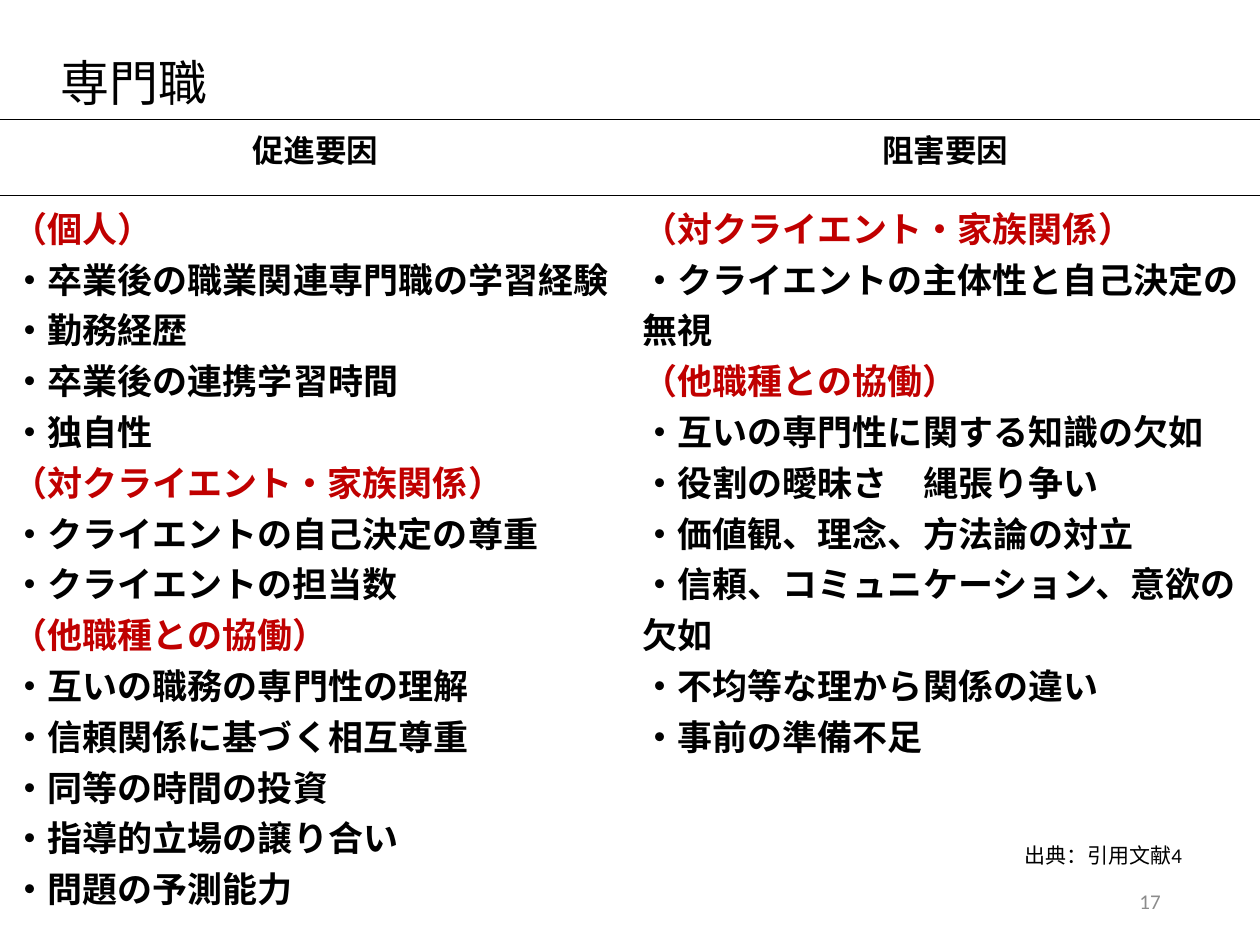
"""Build the slide on factors that help or hinder professionals."""
from lxml import etree
from pptx import Presentation, util as u
from pptx.dml.color import RGBColor
from pptx.enum import shapes, text
from pptx.oxml import ns

BLACK = RGBColor(0, 0, 0)
RED = RGBColor(0xC0, 0, 0)
GREY = RGBColor(0x8C, 0x8C, 0x8C)
WHITE = RGBColor(255, 255, 255)
PLAIN = "{2D5ABB26-0587-4C30-8999-92F81FD0307C}"

HEADS = ["促進要因", "阻害要因"]
LISTS = [
    ["（個人）", "・卒業後の職業関連専門職の学習経験", "・勤務経歴",
     "・卒業後の連携学習時間", "・独自性", "（対クライエント・家族関係）",
     "・クライエントの自己決定の尊重", "・クライエントの担当数",
     "（他職種との協働）", "・互いの職務の専門性の理解",
     "・信頼関係に基づく相互尊重", "・同等の時間の投資",
     "・指導的立場の譲り合い", "・問題の予測能力"],
    ["（対クライエント・家族関係）", "・クライエントの主体性と自己決定の無視",
     "（他職種との協働）", "・互いの専門性に関する知識の欠如",
     "・役割の曖昧さ　縄張り争い", "・価値観、理念、方法論の対立",
     "・信頼、コミュニケーション、意欲の欠如", "・不均等な理から関係の違い",
     "・事前の準備不足"],
]


def write(para, words, size, color=BLACK, bold=False, align=text.PP_ALIGN.LEFT):
    para.alignment = align
    run = para.add_run()
    run.text = words
    run.font.color.rgb = color
    for key, val in {"name": "Calibri", "size": u.Pt(size), "bold": bold}.items():
        setattr(run.font, key, val)


def rule(cell, side):
    line = etree.Element(ns.qn(f"a:{side}"), w=str(u.Pt(1)))
    fill = etree.SubElement(line, ns.qn("a:solidFill"))
    etree.SubElement(fill, ns.qn("a:srgbClr"), val=str(BLACK))
    props = cell._tc.get_or_add_tcPr()
    props.insert(len(props.findall(ns.qn("a:lnT"))), line)


prs = Presentation()
prs.slide_width, prs.slide_height = u.Inches(10), u.Inches(7.5)
wide = prs.slide_width
slide = prs.slides.add_slide(prs.slide_layouts[5])

title = slide.shapes.title
spot = {"left": 0.38, "top": 0.42, "width": 9.34, "height": 0.53}
for key, val in spot.items():
    setattr(title, key, u.Inches(val))
frame = title.text_frame
frame.vertical_anchor = text.MSO_ANCHOR.TOP
frame.auto_size = text.MSO_AUTO_SIZE.NONE
frame.paragraphs[0].line_spacing = 0.9
write(frame.paragraphs[0], "専門職", 28)

grid = slide.shapes.add_table(2, 2, 0, u.Inches(0.95), wide, u.Inches(6.25))
table = grid.table
next(grid.element.iter(ns.qn("a:tableStyleId"))).text = PLAIN
table.horz_banding = False
for row, high in zip(table.rows, (0.6, 5.65)):
    row.height = u.Inches(high)
for col, (head, items) in enumerate(zip(HEADS, LISTS)):
    table.columns[col].width = wide // 2
    top, body = table.cell(0, col), table.cell(1, col)
    for cell in (top, body):
        cell.fill.background()
    write(top.text_frame.paragraphs[0], head, 18, bold=True,
          align=text.PP_ALIGN.CENTER)
    for side in ("lnT", "lnB"):
        rule(top, side)
    rule(body, "lnT")
    for num, item in enumerate(items):
        frame = body.text_frame
        para = frame.add_paragraph() if num else frame.paragraphs[0]
        write(para, item, 20, RED if item.startswith("（") else BLACK, True)

source = slide.shapes.add_shape(
    shapes.MSO_SHAPE.RECTANGLE, *map(u.Inches, (6.98, 6.66, 2.5, 0.25)))
source.shadow.inherit = False
source.fill.solid()
source.fill.fore_color.rgb = WHITE
source.line.fill.background()
page = slide.shapes.add_textbox(*map(u.Inches, (7.06, 6.95, 2.25, 0.4)))
for shape, words, color in ((source, "出典：引用文献4", BLACK), (page, "17", GREY)):
    frame = shape.text_frame
    frame.word_wrap = True
    frame.vertical_anchor = text.MSO_ANCHOR.MIDDLE
    write(frame.paragraphs[0], words, 12, color, align=text.PP_ALIGN.RIGHT)

prs.save("out.pptx")
